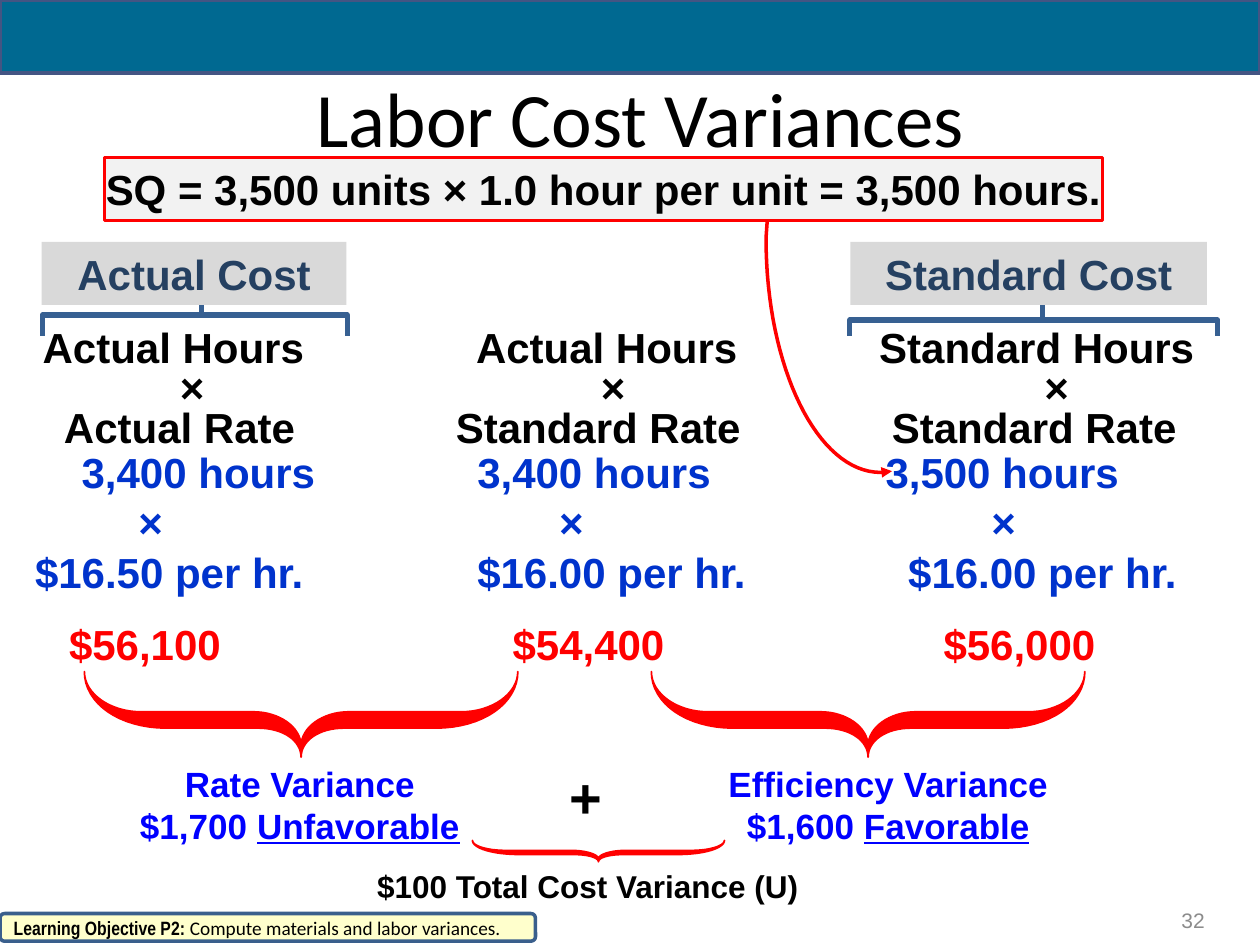
from lxml.etree import SubElement
from pptx import Presentation
from pptx.dml.color import RGBColor
from pptx.enum.shapes import MSO_SHAPE
from pptx.enum.text import MSO_ANCHOR, PP_ALIGN
from pptx.oxml.ns import qn
from pptx.util import Inches, Pt

BLACK = RGBColor(0x00, 0x00, 0x00)
RED = RGBColor(0xFF, 0x00, 0x00)
BLUE = RGBColor(0x00, 0x00, 0xFF)
ROYAL = RGBColor(0x00, 0x33, 0xCC)
NAVY = RGBColor(0x25, 0x40, 0x61)
STEEL = RGBColor(0x37, 0x60, 0x92)
TEAL = RGBColor(0x00, 0x69, 0x91)
INDIGO = RGBColor(0x44, 0x55, 0x83)
SLATE = RGBColor(0x3A, 0x5F, 0x8C)
GREY = RGBColor(0x8C, 0x8C, 0x8C)
SILVER = RGBColor(0xD9, 0xD9, 0xD9)
PALE = RGBColor(0xF2, 0xF2, 0xF2)
CREAM = RGBColor(0xFF, 0xFF, 0xCC)

INSET = 0.1
FORMULA = [
    (("Actual Hours", "Actual Hours", "Standard Hours"), (0.34, 3.78, 6.98), BLACK, 0),
    (("×", "×", "×"), (1.43, 4.77, 8.29), BLACK, 0),
    (("Actual Rate", "Standard Rate", "Standard Rate"), (0.51, 3.62, 7.08), BLACK, 0),
]
AMOUNTS = [
    (("3,400 hours", "3,400 hours", "3,500 hours"), (0.65, 3.79, 7.03), ROYAL, 0),
    (("×", "×", "×"), (1.1, 4.44, 7.87), ROYAL, 0),
    (("$16.50 per hr.", "$16.00 per hr.", "$16.00 per hr."), (0.28, 3.79, 7.21), ROYAL, 0),
    (("$56,100", "$54,400", "$56,000"), (0.55, 4.07, 7.49), RED, 12.5),
]


def add_run(p, text, size, color, **formats):
    r = p.add_run()
    r.text = text
    r.font.color.rgb = color
    for name, value in ({"name": "Arial", "bold": True, "size": Pt(size)} | formats).items():
        setattr(r.font, name, value)


def paint(sp, fill=None, line=None, width=1):
    sp.shadow.inherit = False
    if fill is None:
        sp.fill.background()
    else:
        sp.fill.solid()
        sp.fill.fore_color.rgb = fill
    if line is None:
        sp.line.fill.background()
    else:
        sp.line.color.rgb = line
        sp.line.width = Pt(width)


def add_box(s, box, kind=MSO_SHAPE.RECTANGLE, **look):
    sp = s.shapes.add_shape(kind, *map(Inches, box))
    paint(sp, **look)
    return sp


def set_frame(sp, align, anchor, wrap=True):
    tf = sp.text_frame
    for name, value in {"word_wrap": wrap, "vertical_anchor": anchor}.items():
        setattr(tf, name, value)
    p = tf.paragraphs[0]
    p.alignment = align
    return p


def add_label(s, box, text, size, color, align=PP_ALIGN.CENTER, anchor=MSO_ANCHOR.TOP, **formats):
    p = set_frame(s.shapes.add_textbox(*map(Inches, box)), align, anchor)
    add_run(p, text, size, color, **formats)


def add_columns(s, box, rows, leading):
    tf = s.shapes.add_textbox(*map(Inches, box)).text_frame
    tf.word_wrap = True
    for i, (cells, stops, color, before) in enumerate(rows):
        p = tf.add_paragraph() if i else tf.paragraphs[0]
        p.line_spacing = Pt(leading)
        p.space_before = Pt(before)
        tabs = SubElement(p._p.get_or_add_pPr(), qn("a:tabLst"))
        for stop in stops:
            SubElement(tabs, qn("a:tab"), pos=str(Inches(stop - INSET)), algn="l")
        add_run(p, "".join("\t" + cell for cell in cells), 24, color)


def bezier(a, b, c, d, steps=16):
    points = []
    for i in range(steps + 1):
        t = i / steps
        weights = ((1 - t) ** 3, 3 * t * (1 - t) ** 2, 3 * t * t * (1 - t), t ** 3)
        points.append(tuple(sum(w * q[k] for w, q in zip(weights, (a, b, c, d))) for k in (0, 1)))
    return points


def add_outline(s, points, close):
    points = [(Inches(x), Inches(y)) for x, y in points]
    builder = s.shapes.build_freeform(*points[0], scale=1.0)
    builder.add_line_segments(points[1:], close=close)
    return builder.convert_to_shape()


def add_sum_brace(s, box):
    left, top, width, height = box
    upper = bezier((0, 0), (0, 0.26), (0.06, 0.47), (0.13, 0.47))
    upper += bezier((0.39, 0.47), (0.45, 0.47), (0.5, 0.65), (0.5, 0.87))
    lower = bezier((0.5, 1), (0.5, 0.81), (0.46, 0.66), (0.4, 0.66))
    lower += bezier((0.19, 0.66), (0.08, 0.66), (0, 0.37), (0, 0))
    half = upper + [(1 - x, y) for x, y in reversed(upper)]
    half += [(1 - x, y) for x, y in reversed(lower)] + lower
    sp = add_outline(s, [(left + x * width, top + y * height) for x, y in half], True)
    paint(sp, RED, RED)


def add_hours_arrow(s):
    start, middle, end = (7.08, 3.74), (6.99, 3.75), (6.09, 1.75)
    curve = [start] + bezier(middle, (6.49, 3.75), (6.08, 2.92), (6.08, 1.89), 32) + [end]
    sp = add_outline(s, curve, False)
    paint(sp, line=RED, width=2)
    SubElement(sp.line._get_or_add_ln(), qn("a:headEnd"), type="triangle")


def add_cost_heading(s, box, brace_box, text):
    brace = add_box(s, brace_box, MSO_SHAPE.RIGHT_BRACE, line=STEEL, width=3)
    brace.rotation = 270
    brace.adjustments[0], brace.adjustments[1] = 0, 0.523
    p = set_frame(add_box(s, box, fill=SILVER), PP_ALIGN.CENTER, MSO_ANCHOR.TOP)
    add_run(p, text, 24, NAVY)


def add_variance(s, box, title, amount, verdict):
    p = set_frame(s.shapes.add_textbox(*map(Inches, box)), PP_ALIGN.CENTER, MSO_ANCHOR.TOP)
    add_run(p, title, 20, BLUE)
    p.add_line_break()
    add_run(p, amount + " ", 20, BLUE)
    add_run(p, verdict, 20, BLUE, underline=True)


def add_quantity_note(s, box):
    sp = add_box(s, box, fill=PALE, line=RED, width=2)
    p = set_frame(sp, PP_ALIGN.CENTER, MSO_ANCHOR.MIDDLE, False)
    add_run(p, "SQ = 3,500 units × 1.0 hour per unit = 3,500 hours.", 24, BLACK)


def add_objective(s, box):
    sp = add_box(s, box, MSO_SHAPE.ROUNDED_RECTANGLE, fill=CREAM, line=SLATE, width=2)
    p = set_frame(sp, PP_ALIGN.LEFT, MSO_ANCHOR.MIDDLE)
    add_run(p, "Learning Objective P2: ", 11, BLACK, name="Arial Narrow")
    add_run(p, "Compute materials and labor variances.", 11, BLACK, name="Calibri", bold=False)


def main():
    prs = Presentation()
    prs.slide_width, prs.slide_height = Inches(10), Inches(7.5)
    s = prs.slides.add_slide(prs.slide_layouts[6])
    add_box(s, (0, 0, 10, 0.58), fill=TEAL, line=INDIGO, width=2.25)
    add_columns(s, (0, 2.58, 10, 1.07), FORMULA, 23)
    add_columns(s, (0, 3.5, 10, 1.92), AMOUNTS, 28.6)
    add_hours_arrow(s)
    add_quantity_note(s, (0.83, 1.25, 7.92, 0.5))
    for box in ((0.67, 5.33, 3.44, 0.68), (5.17, 5.33, 3.44, 0.68), (3.75, 6.67, 2, 0.17)):
        add_sum_brace(s, box)
    add_variance(s, (0.25, 6, 4.26, 0.77), "Rate Variance", "$1,700", "Unfavorable")
    add_variance(s, (4.92, 6, 4.26, 0.77), "Efficiency Variance", "$1,600", "Favorable")
    add_label(s, (0.42, 0.58, 9.33, 0.7), "Labor Cost Variances", 44, BLACK,
              anchor=MSO_ANCHOR.MIDDLE, name="Calibri", bold=False)
    add_label(s, (7.33, 7.1, 2.33, 0.4), "32", 12, GREY, PP_ALIGN.RIGHT,
              MSO_ANCHOR.MIDDLE, bold=False)
    add_cost_heading(s, (0.33, 1.92, 2.42, 0.5), (1.38, 1.29, 0.33, 2.42), "Actual Cost")
    add_cost_heading(s, (6.75, 1.92, 2.83, 0.5), (8.08, 1.08, 0.25, 2.92), "Standard Cost")
    add_label(s, (2.75, 6.83, 3.83, 0.4), "$100 Total Cost Variance (U)", 18, BLACK)
    add_label(s, (4.42, 6, 0.67, 0.64), "+", 32, BLACK, PP_ALIGN.LEFT)
    add_objective(s, (0, 7.25, 4.25, 0.22))
    prs.save("out.pptx")


if __name__ == "__main__":
    main()
